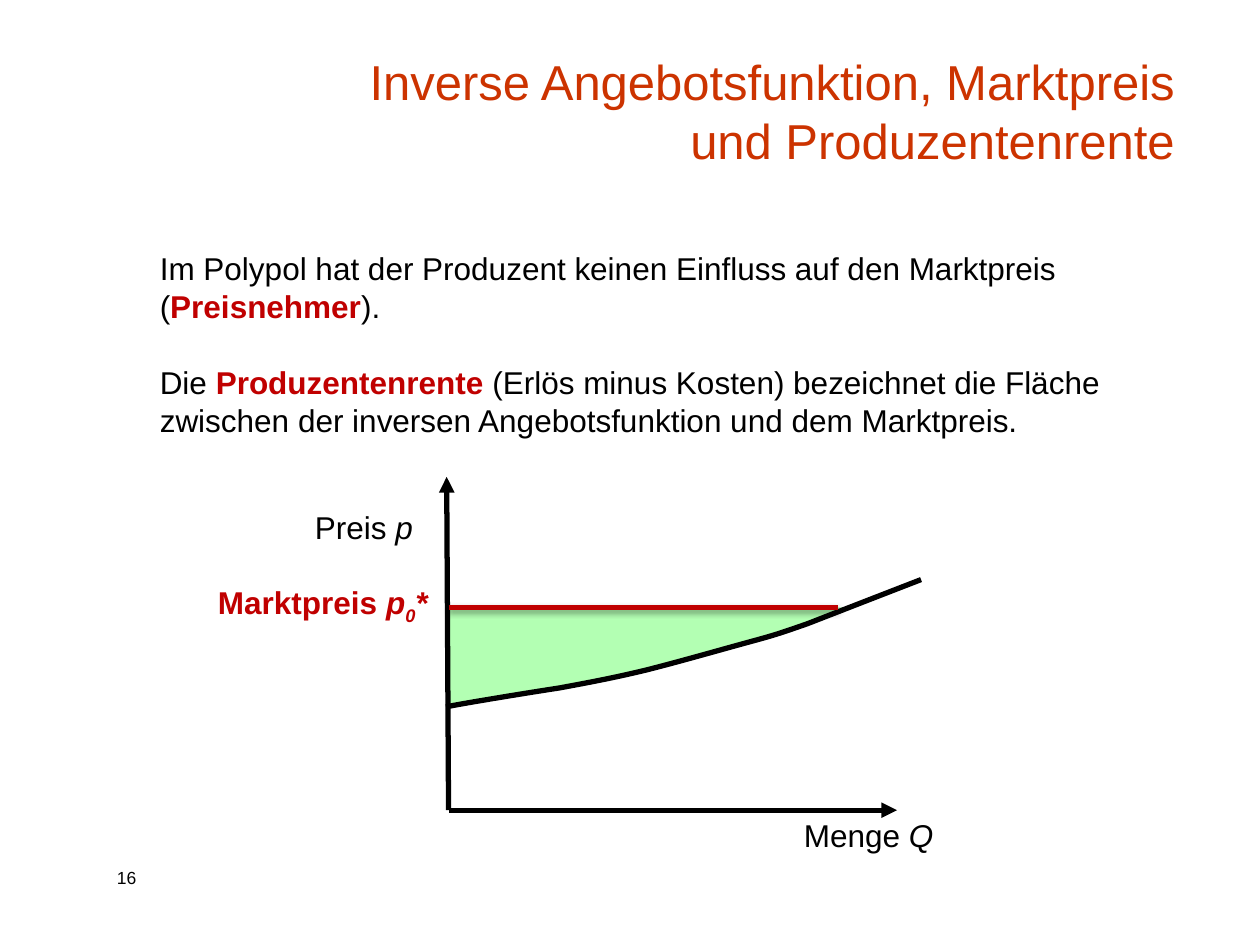
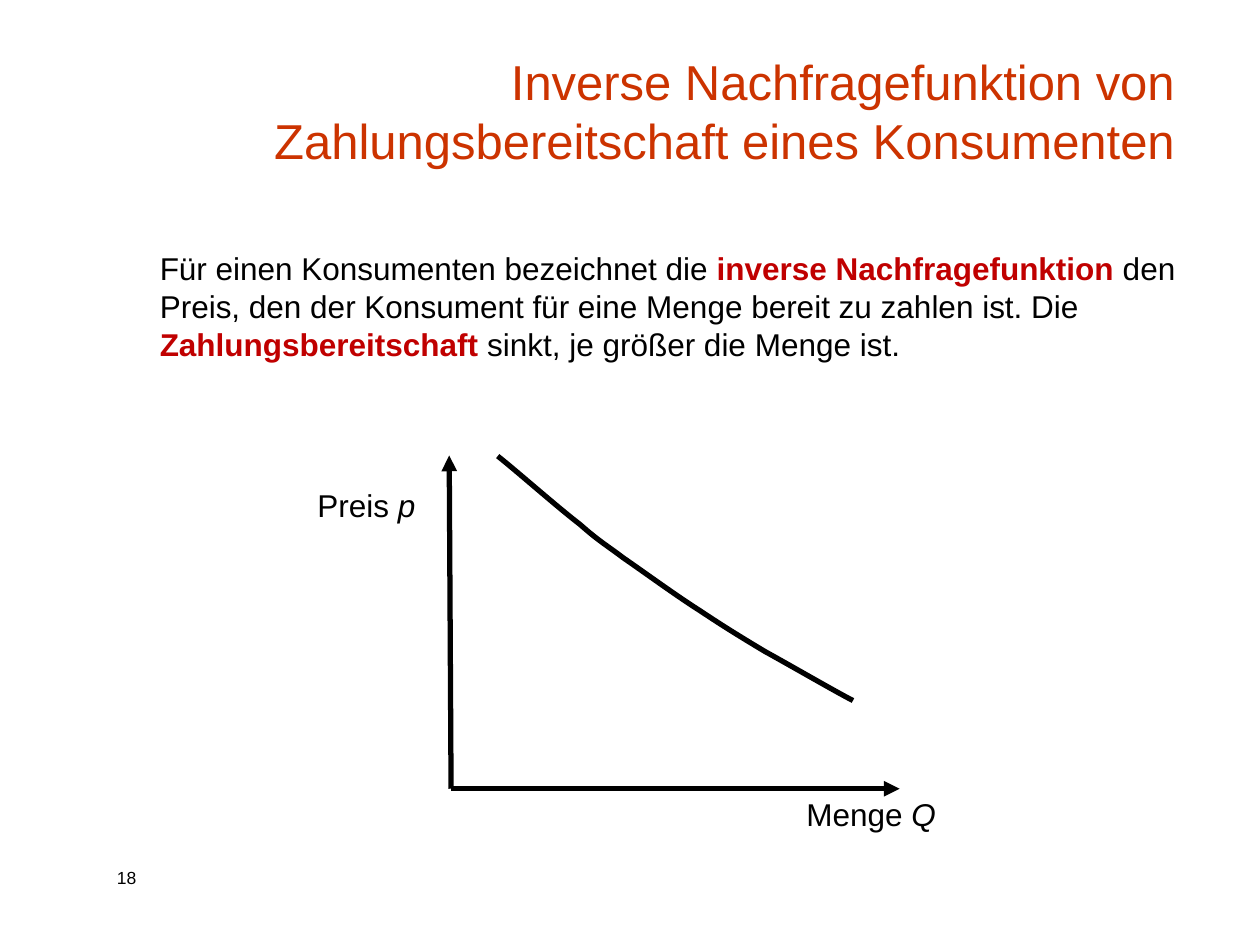
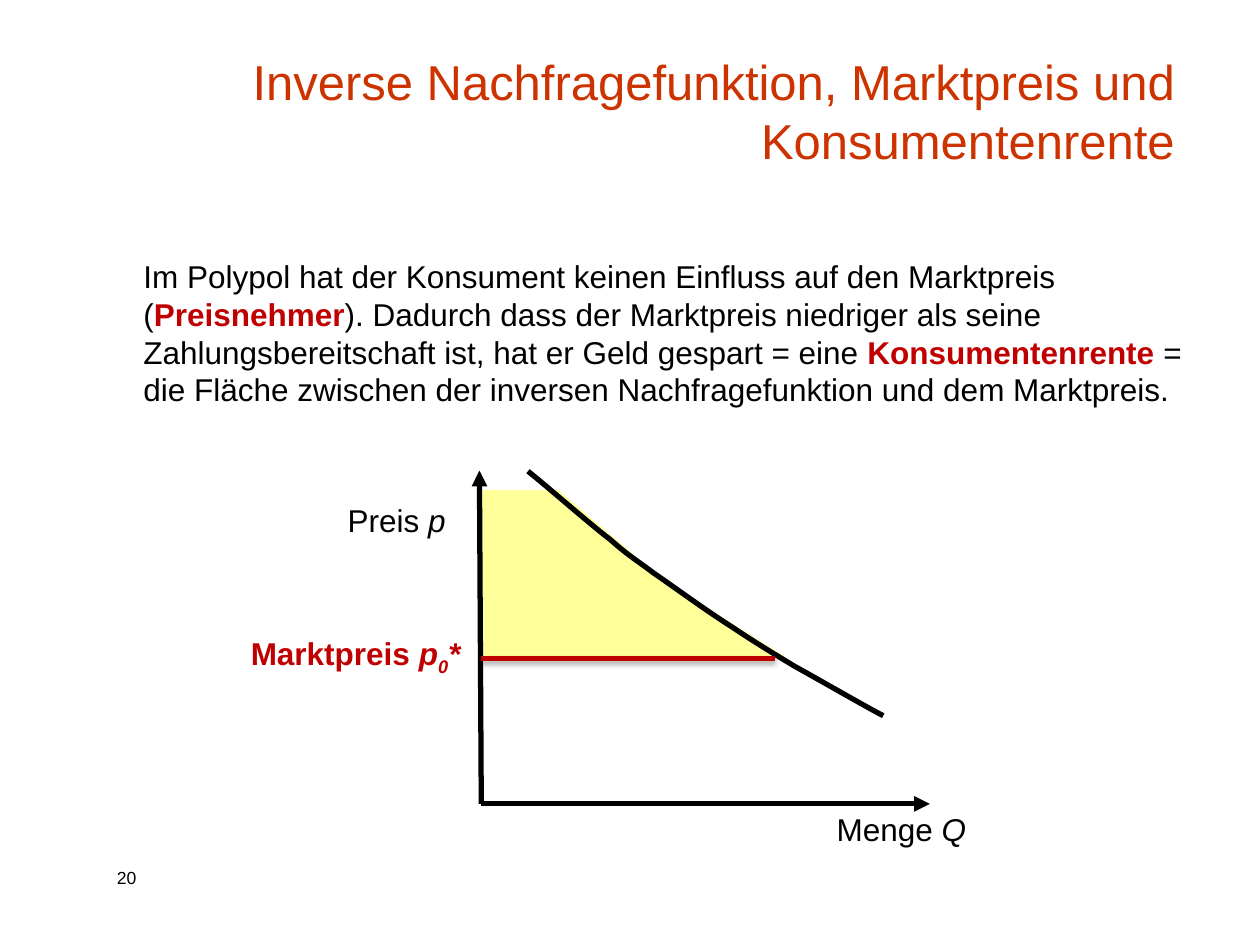
import pptx
import pptx.util
import pptx.dml.color
import pptx.enum.shapes
import pptx.enum.text
import pptx.oxml.ns
from lxml import etree

qn = pptx.oxml.ns.qn

# Grid: 100 columns by 75 rows on a 10 x 7.5 inch slide
COLS, ROWS = 100, 75
WIDTH, HEIGHT = pptx.util.Inches(10), pptx.util.Inches(7.5)

FONT = "Arial"
BLACK, RED, TITLE_RED = "000000", "C00000", "CC3300"
GREEN, YELLOW = "B3FFB3", "FFFF99"
BODY_SIZE, LINE_WIDTH = 18, 3
BLANK_LINE = 21.6

# Curves as Bezier points: columns right of the origin, rows above it
SUPPLY = [(-0.2, 8.2), (1.3, 8.5), (6.2, 9.3), (8.8, 9.7),
          (11.5, 10.2), (13.1, 10.5), (15.6, 11.1),
          (18, 11.7), (21.5, 12.7), (23.7, 13.3),
          (25.9, 13.9), (26.2, 14), (28.5, 14.8),
          (30.8, 15.7), (35.7, 17.6), (37.5, 18.3)]
DEMAND = [(31.9, 7), (30.7, 7.6), (26.9, 9.8), (24.9, 10.9),
          (22.9, 12.1), (21.6, 12.9), (19.8, 14.1),
          (17.9, 15.3), (15.3, 17.2), (13.7, 18.3),
          (12.1, 19.5), (11.8, 19.6), (10.2, 21),
          (8.5, 22.3), (5.1, 25.3), (3.7, 26.4)]


def rgb(value):
    return pptx.dml.color.RGBColor.from_string(value)


def x(col):
    return round(WIDTH * col / COLS)


def y(row):
    return round(HEIGHT * row / ROWS)


class Deck:
    """Holds the shared style, the current slide and its diagram origin."""

    def __init__(self):
        self.prs = pptx.Presentation()
        self.prs.slide_width, self.prs.slide_height = WIDTH, HEIGHT
        self.s = None
        self.origin = (0, 0)

    def slide(self, title, title_left, number):
        self.s = self.prs.slides.add_slide(self.prs.slide_layouts[6])
        tf = self.text((title_left, 4.2, 94.2 - title_left, 9.7), [[(title, "")]],
                       size=28, color=TITLE_RED)
        tf.vertical_anchor = pptx.enum.text.MSO_ANCHOR.BOTTOM
        tf.paragraphs[0].alignment = pptx.enum.text.PP_ALIGN.RIGHT
        self.text((8.3, 68.3, 6.7, 2.7), [[(str(number), "")]], size=10)

    def text(self, box, paragraphs, size=BODY_SIZE, color=BLACK, inset=True):
        """Run styles: k = red key term, b = bold, i = italic, s = subscript."""
        left, top, width, height = box
        tf = self.s.shapes.add_textbox(x(left), y(top), x(width), y(height)).text_frame
        tf.word_wrap = True
        if not inset:
            tf.margin_left = tf.margin_right = tf.margin_top = tf.margin_bottom = 0
        for n, runs in enumerate(paragraphs):
            p = tf.add_paragraph() if n else tf.paragraphs[0]
            if n:
                p.space_before = pptx.util.Pt(BLANK_LINE)
            for content, style in runs:
                r = p.add_run()
                r.text = content
                r.font.name, r.font.size = FONT, pptx.util.Pt(size)
                r.font.bold = "k" in style or "b" in style
                r.font.italic = "i" in style
                r.font.color.rgb = rgb(RED if "k" in style else color)
                if "s" in style:
                    r.font._element.set("baseline", "-25000")
        return tf

    def at(self, right, up):
        """Slide position of a diagram point."""
        return x(self.origin[0] + right), y(self.origin[1] - up)

    def label(self, right, up, width, runs, color=BLACK):
        col, row = self.origin
        self.text((col + right, row - up, width, 3), [runs], color=color, inset=False)

    def line(self, start, end, color=BLACK, arrow=False, shadow=False):
        cx = self.s.shapes.add_connector(pptx.enum.shapes.MSO_CONNECTOR.STRAIGHT,
                                         *self.at(*start), *self.at(*end))
        cx.line.color.rgb = rgb(color)
        cx.line.width = pptx.util.Pt(LINE_WIDTH)
        if arrow:
            etree.SubElement(cx.line._get_or_add_ln(), qn("a:tailEnd"), type="triangle")
        effects = etree.SubElement(cx._element.spPr, qn("a:effectLst"))
        if shadow:
            outer = etree.SubElement(effects, qn("a:outerShdw"), blurRad="40000",
                                     dist="23000", dir="5400000", rotWithShape="0")
            tint = etree.SubElement(outer, qn("a:srgbClr"), val=BLACK)
            etree.SubElement(tint, qn("a:alpha"), val="35000")

    def outline(self, points, close):
        first, *rest = [self.at(*point) for point in points]
        builder = self.s.shapes.build_freeform(*first)
        builder.add_line_segments(rest, close=close)
        sp = builder.convert_to_shape()
        sp.shadow.inherit = False
        return sp

    def area(self, points, color):
        sp = self.outline(points, close=True)
        sp.fill.solid()
        sp.fill.fore_color.rgb = rgb(color)
        sp.line.fill.background()

    def curve(self, points):
        sp = self.outline(points, close=False)
        sp.fill.background()
        sp.line.color.rgb = rgb(BLACK)
        sp.line.width = pptx.util.Pt(LINE_WIDTH)
        # Join every three segments into one Bezier segment
        segments = list(sp._element.iter(qn("a:lnTo")))
        for n in range(0, len(segments), 3):
            bezier = etree.Element(qn("a:cubicBezTo"))
            segments[n].addprevious(bezier)
            for segment in segments[n:n + 3]:
                bezier.append(segment[0])
                segment.getparent().remove(segment)

    def axes(self):
        self.label(-10.6, 24, 13, [("Preis", ""), (" p", "i")])
        self.label(28.2, -0.5, 11.1, [("Menge", ""), (" Q", "i")])
        self.line((0, 0), (35.6, 0), arrow=True)
        self.line((0, 0), (-0.15, 26.45), arrow=True)

    def market_price(self, price, length):
        self.line((0, price), (length, price), RED, shadow=True)
        self.label(-18.3, price + 1.9, 17.1,
                   [("Marktpreis", "b"), (" p", "bi"), ("0", "bis"), ("*", "bi")], RED)


def main():
    deck = Deck()

    # Producer surplus
    deck.slide("Inverse Angebotsfunktion, Marktpreis und Produzentenrente", 20.9, 16)
    deck.origin = (35.6, 64.3)
    deck.area([(0, 16.1), (32, 16.1), (25.8, 14), (19.6, 12), (8.2, 9.6), (0, 8.2)], GREEN)
    deck.axes()
    deck.curve(SUPPLY)
    deck.text((11.7, 19.3, 85.3, 16.2), [
        [("Im Polypol hat der Produzent keinen Einfluss auf den Marktpreis (", ""),
         ("Preisnehmer", "k"), (").", "")],
        [("Die ", ""), ("Produzentenrente ", "k"),
         ("(Erlös minus Kosten) bezeichnet die Fläche zwischen der inversen "
          "Angebotsfunktion und dem Marktpreis.", "")]])
    deck.market_price(16.1, 30.9)

    # Willingness to pay
    deck.slide("Inverse Nachfragefunktion von Zahlungsbereitschaft eines Konsumenten", 18.7, 18)
    deck.origin = (35.8, 62.6)
    deck.axes()
    deck.curve(DEMAND)
    deck.text((11.7, 19.3, 85.3, 10.1), [
        [("Für einen Konsumenten bezeichnet die ", ""),
         ("inverse Nachfragefunktion ", "k"),
         ("den Preis, den der Konsument für eine Menge bereit zu zahlen ist. Die ", ""),
         ("Zahlungsbereitschaft", "k"), (" sinkt, je größer die Menge ist.", "")]])

    # Consumer surplus
    deck.slide("Inverse Nachfragefunktion, Marktpreis und Konsumentenrente", 18.7, 20)
    deck.origin = (38.2, 63.8)
    deck.area([(0, 11.6), (24.2, 11.6), (14.4, 17.8), (6.1, 24.9), (0, 24.9)], YELLOW)
    deck.axes()
    deck.curve(DEMAND)
    deck.market_price(11.55, 23.3)
    deck.text((10.4, 19.9, 85.3, 13.1), [
        [("Im Polypol hat der Konsument keinen Einfluss auf den Marktpreis (", ""),
         ("Preisnehmer", "k"),
         ("). Dadurch dass der Marktpreis niedriger als seine Zahlungsbereitschaft "
          "ist, hat er Geld gespart = eine ", ""),
         ("Konsumentenrente ", "k"),
         ("= die Fläche zwischen der inversen Nachfragefunktion und dem Marktpreis.", "")]])

    deck.prs.save("out.pptx")


if __name__ == "__main__":
    main()
